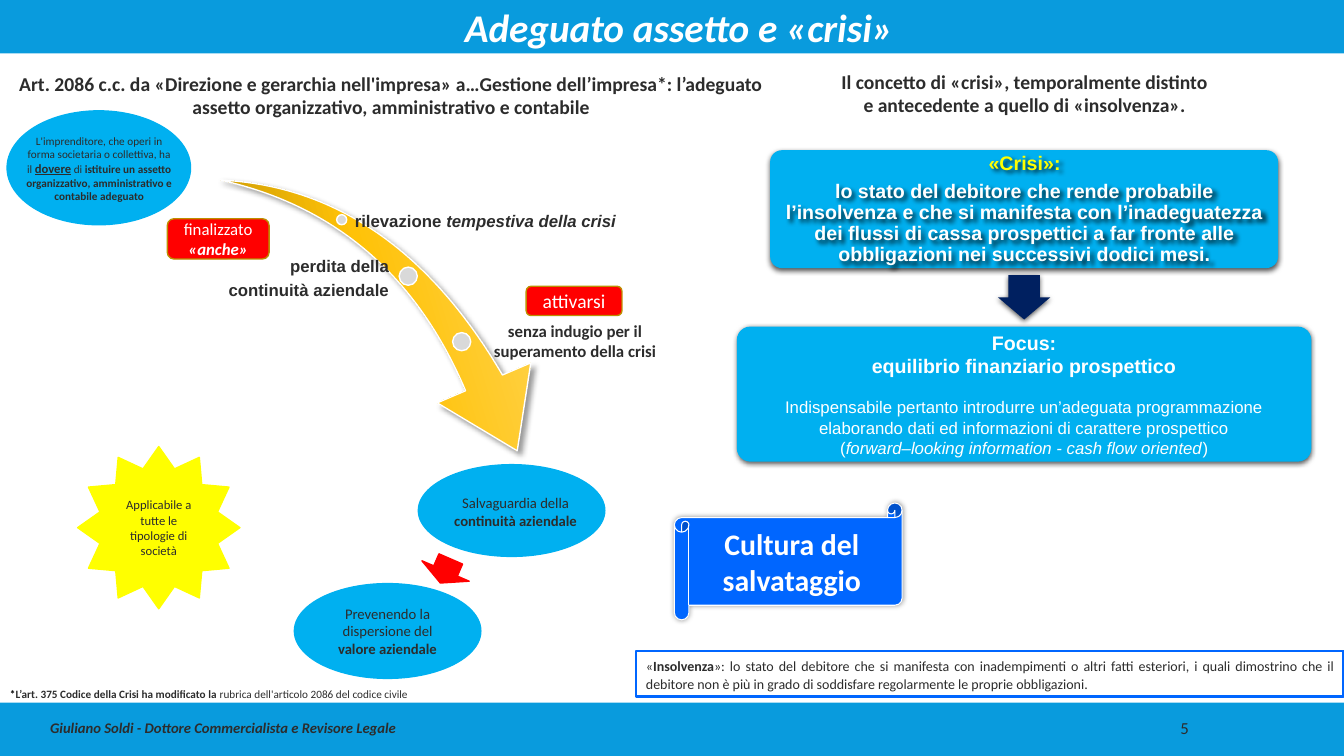
import pptx
import pptx.util
import pptx.dml.color
import pptx.enum.shapes
import pptx.enum.text
import pptx.oxml

SHAPE = pptx.enum.shapes.MSO_SHAPE
ALIGN = pptx.enum.text.PP_ALIGN
ANCHOR = pptx.enum.text.MSO_ANCHOR
NS = 'xmlns:a="http://schemas.openxmlformats.org/drawingml/2006/main"'

# Grid: square cells, 10 to the inch; boxes are (left, top, width, height) in cells
COLS, ROWS = 133.33, 75
CELL = pptx.util.Inches(0.1)

INK, WHITE, CYAN, RED, YELLOW = "2C2C2C", "FFFFFF", "00B0F0", "FF0000", "FFFF00"
BAND, NAVY, BLUE, GOLD, GREY = "099BDD", "002060", "0066FF", "BD8E00", "D9D9D9"
SWOOSH_STOPS = [(0, "AB8100"), (0.48, "FFC208"), (1, "FFD966")]

# Shadows: opacity %, blur pt, distance pt, direction in degrees
CARD_SHADOW = (68, 4, 1.2, 90)
SWOOSH_SHADOW = (40, 4, 3, 45)
SCROLL_SHADOW = (40, 4, 0, 0)
LETTER_SHADOW = (80, 3, 2.5, 45)

CARD = dict(fill=CYAN, adjust=[0.1], shadow=CARD_SHADOW)
OVAL = dict(fill=CYAN, line=(CYAN, 1))
TAG = dict(fill=RED, line=(GOLD, 1), color=WHITE)
DOT = dict(fill=GREY, line=(WHITE, 1))
CARD_TEXT = dict(font="Arial", color=WHITE, insets=(0.6, 0.6, 0.6, 0.6))
STEP_TEXT = dict(font="Arial", size=12, insets=(0.2, 0.2, 0.2, 0.2), spacing=0.9, after=4)

# A run is plain text or (text, flags, overrides); flags: b bold, i italic, u underline
# Each part: preset shape (None for a text box), box, paragraphs, options
PARTS = [
    (SHAPE.RECTANGLE, (0, 0, COLS, ROWS), [], dict(fill=BAND)),
    (SHAPE.RECTANGLE, (0, 5.3, COLS, 64.4), [], dict(fill=WHITE)),
    (None, (0.6, 70.2, 39.7, 4),
     [[("Giuliano Soldi - Dottore Commercialista e Revisore Legale", "bi")]],
     dict(size=10.5, align=ALIGN.RIGHT)),
    (SHAPE.OVAL, (0.7, 11, 18.2, 11.3), [], OVAL),
    (None, (1.5, 12.8, 16.7, 7.9),
     [["L'imprenditore, che operi in forma societaria o collettiva, ha il ",
       ("dovere", "bu", dict(size=9)), " di ",
       ("istituire un assetto organizzativo, amministrativo e contabile adeguato", "b")]],
     dict(size=8, anchor=ANCHOR.TOP)),
    (SHAPE.ROUNDED_RECTANGLE, (16.6, 21.7, 10.1, 4),
     [["finalizzato ", ("«anche»", "bi")]], dict(TAG, size=12)),
    (SHAPE.OVAL, (41.5, 46.1, 18.5, 9.1), [], OVAL),
    (None, (42.6, 48.5, 17.1, 4.5),
     [["Salvaguardia della ", ("continuità aziendale", "b")]],
     dict(size=10.5, anchor=ANCHOR.TOP)),
    (SHAPE.RIGHT_ARROW, (42.9, 54.1, 2.6, 5.1), [],
     dict(fill=RED, line=(RED, 1), turn=113.4)),
    (SHAPE.OVAL, (29.2, 57.9, 18.5, 9.4),
     [["Prevenendo la dispersione del ", ("valore aziendale", "b")]], dict(OVAL, size=10.5)),
    (SHAPE.STAR_12_POINT, (7.7, 44.3, 16.1, 16.1),
     [["Applicabile a tutte le tipologie di società"]],
     dict(fill=YELLOW, line=(YELLOW, 1), size=9)),
    (None, (-0.6, 6.6, 78.8, 5),
     [[("Art. 2086 c.c. da «Direzione e gerarchia nell'impresa» a…Gestione dell’impresa*: "
        "l’adeguato assetto organizzativo, amministrativo e contabile", "b")]],
     dict(size=14, anchor=ANCHOR.TOP)),
    (None, (21.4, -0.2, 91.9, 5.7), [[("Adeguato assetto e «crisi»", "bi")]],
     dict(size=28, color=WHITE, anchor=ANCHOR.TOP)),
    (SHAPE.RECTANGLE, (63.1, 64.6, 70.2, 4.5),
     [["«", ("Insolvenza", "b"),
       "»: lo stato del debitore che si manifesta con inadempimenti o altri fatti esteriori, "
       "i quali dimostrino che il debitore non è più in grado di soddisfare regolarmente "
       "le proprie obbligazioni."]],
     dict(line=(BLUE, 1.75), size=10, align=ALIGN.JUSTIFY, spacing=1.07, anchor=ANCHOR.TOP)),
    (SHAPE.ROUNDED_RECTANGLE, (76.4, 14.9, 50.4, 11.7), [], CARD),
    (None, (76.8, 15.3, 49.7, 11),
     [[("«Crisi»:", "b", dict(color=YELLOW))],
      [("lo stato del debitore che rende probabile l’insolvenza e che si manifesta con "
        "l’inadeguatezza dei flussi di cassa prospettici a far fronte alle obbligazioni nei "
        "successivi dodici mesi.", "b")]],
     dict(CARD_TEXT, size=14, spacing=0.9, after=5, shadow=LETTER_SHADOW)),
    (SHAPE.RIGHT_ARROW, (99.4, 26.9, 4.4, 5.2), [],
     dict(fill=NAVY, adjust=[0.6, 0.5], turn=90, shadow=CARD_SHADOW)),
    (SHAPE.ROUNDED_RECTANGLE, (73.1, 32.4, 57, 13.4), [], CARD),
    (None, (73.5, 32.8, 56.2, 12.6),
     [[("Focus:", "b", dict(size=14))],
      [("equilibrio finanziario prospettico", "b", dict(size=14, after=14))],
      ["Indispensabile pertanto introdurre un’adeguata programmazione elaborando dati ed "
       "informazioni di carattere prospettico"],
      ["(", ("forward–looking information - cash flow oriented", "i"), ")"]],
     dict(CARD_TEXT, size=12)),
    (None, (79, 6.1, 45.3, 6.3),
     [[("Il concetto di «crisi», temporalmente distinto", "b")],
      [("e antecedente a quello di «insolvenza».", "b")]], dict(size=14)),
    (SHAPE.HORIZONTAL_SCROLL, (66.9, 49.9, 22.6, 11.6), [[("Cultura del salvataggio", "b")]],
     dict(fill=BLUE, line=(WHITE, 0.75), size=21.3, color=WHITE, shadow=SCROLL_SHADOW)),
    (None, (0, 66.7, 49.8, 3.1),
     [[("*", "b", dict(color="000000")), ("L’art. 375 Codice della Crisi ha modificato la", "b"),
       " rubrica dell'articolo 2086 del codice civile"]],
     dict(size=8, align=ALIGN.JUSTIFY, spacing=pptx.util.Pt(16.8), anchor=ANCHOR.TOP)),
    (None, (46.7, 31.3, 20.7, 5), [[("senza indugio per il superamento della crisi", "b")]],
     dict(size=12, anchor=ANCHOR.TOP)),
    (SHAPE.ROUNDED_RECTANGLE, (52.2, 28.4, 9.5, 2.9), [["attivarsi"]], dict(TAG, size=14)),
    (SHAPE.SWOOSH_ARROW, (21.3, 18.6, 34.2, 24.3), [],
     dict(stops=SWOOSH_STOPS, line=(WHITE, 1), adjust=[0.163, 0.314], turn=73.3,
          shadow=SWOOSH_SHADOW)),
    (SHAPE.OVAL, (33.4, 21.3, 1, 1), [], DOT),
    (SHAPE.OVAL, (39.6, 26.5, 1.8, 1.8), [], DOT),
    (SHAPE.OVAL, (44.9, 33, 1.8, 1.8), [], DOT),
    (None, (35, 18.3, 27.7, 7.5),
     [[("rilevazione ", "b"), ("tempestiva della crisi", "bi")]],
     dict(STEP_TEXT, align=ALIGN.LEFT)),
    (None, (16.7, 23.9, 22.1, 7.5),
     [[("perdita della", "b")], [("continuità aziendale", "b")]],
     dict(STEP_TEXT, align=ALIGN.RIGHT)),
    (None, (116.6, 70.2, 10.3, 4), [["5"]],
     dict(size=12, align=ALIGN.LEFT, insets=(0.5, 0.5, 1, 0.5))),
]


def rgb(code):
    return pptx.dml.color.RGBColor.from_string(code)


def cells(count):
    return int(count * CELL)


def add_shadow(shape, opacity, blur, distance, direction):
    shape.shadow.inherit = False
    effects = shape.fill._xPr.find(pptx.oxml.ns.qn("a:effectLst"))
    effects.append(pptx.oxml.parse_xml(
        f'<a:outerShdw {NS} blurRad="{int(blur * 12700)}" dist="{int(distance * 12700)}" '
        f'dir="{direction * 60000}" algn="ctr" rotWithShape="0"><a:srgbClr val="000000">'
        f'<a:alpha val="{opacity * 1000}"/></a:srgbClr></a:outerShdw>'))


def paint(shape, fill=None, stops=None, line=None, adjust=(), turn=0):
    if stops:
        shape.fill.gradient()
        shape.fill.gradient_angle = 90
        grad = shape.fill._xPr.find(pptx.oxml.ns.qn("a:gradFill"))
        marks = "".join(f'<a:gs pos="{int(at * 100000)}"><a:srgbClr val="{code}"/></a:gs>'
                        for at, code in stops)
        grad.replace(grad.gsLst, pptx.oxml.parse_xml(f"<a:gsLst {NS}>{marks}</a:gsLst>"))
    elif fill:
        shape.fill.solid()
        shape.fill.fore_color.rgb = rgb(fill)
    else:
        shape.fill.background()
    if line:
        shape.line.color.rgb = rgb(line[0])
        shape.line.width = pptx.util.Pt(line[1])
    else:
        shape.line.fill.background()
    for index, value in enumerate(adjust):
        shape.adjustments[index] = value
    shape.rotation = turn


def write(frame, paragraphs, size=12, color=INK, font="Calibri", align=ALIGN.CENTER,
          anchor=ANCHOR.MIDDLE, insets=(1, 0.5, 1, 0.5), spacing=None, after=0):
    frame.word_wrap = True
    frame.vertical_anchor = anchor
    (frame.margin_left, frame.margin_top,
     frame.margin_right, frame.margin_bottom) = map(cells, insets)
    for index, pieces in enumerate(paragraphs):
        paragraph = frame.add_paragraph() if index else frame.paragraphs[0]
        paragraph.alignment = align
        paragraph.space_after = pptx.util.Pt(after)
        if spacing:
            paragraph.line_spacing = spacing
        for piece in pieces:
            text, flags, own = ((piece, "") if isinstance(piece, str) else piece) + ({},) \
                if isinstance(piece, str) or len(piece) == 2 else piece
            run = paragraph.add_run()
            run.text = text
            run.font.name = font
            run.font.size = pptx.util.Pt(own.get("size", size))
            run.font.color.rgb = rgb(own.get("color", color))
            run.font.bold, run.font.italic, run.font.underline = (f in flags for f in "biu")
            if "after" in own:
                paragraph.space_after = pptx.util.Pt(own["after"])


def add_part(slide, preset, box, paragraphs, options):
    place = [cells(length) for length in box]
    looks = {key: options[key] for key in ("fill", "stops", "line", "adjust", "turn")
             if key in options}
    wording = {key: value for key, value in options.items()
               if key not in looks and key != "shadow"}
    if preset is None:
        shape = slide.shapes.add_textbox(*place)
    else:
        shape = slide.shapes.add_shape(preset, *place)
        shape.shadow.inherit = False
        paint(shape, **looks)
    if "shadow" in options:
        add_shadow(shape, *options["shadow"])
    if paragraphs:
        write(shape.text_frame, paragraphs, **wording)


def main():
    deck = pptx.Presentation()
    deck.slide_width, deck.slide_height = cells(COLS), cells(ROWS)
    slide = deck.slides.add_slide(deck.slide_layouts[6])
    for part in PARTS:
        add_part(slide, *part)
    deck.save("out.pptx")


if __name__ == "__main__":
    main()
